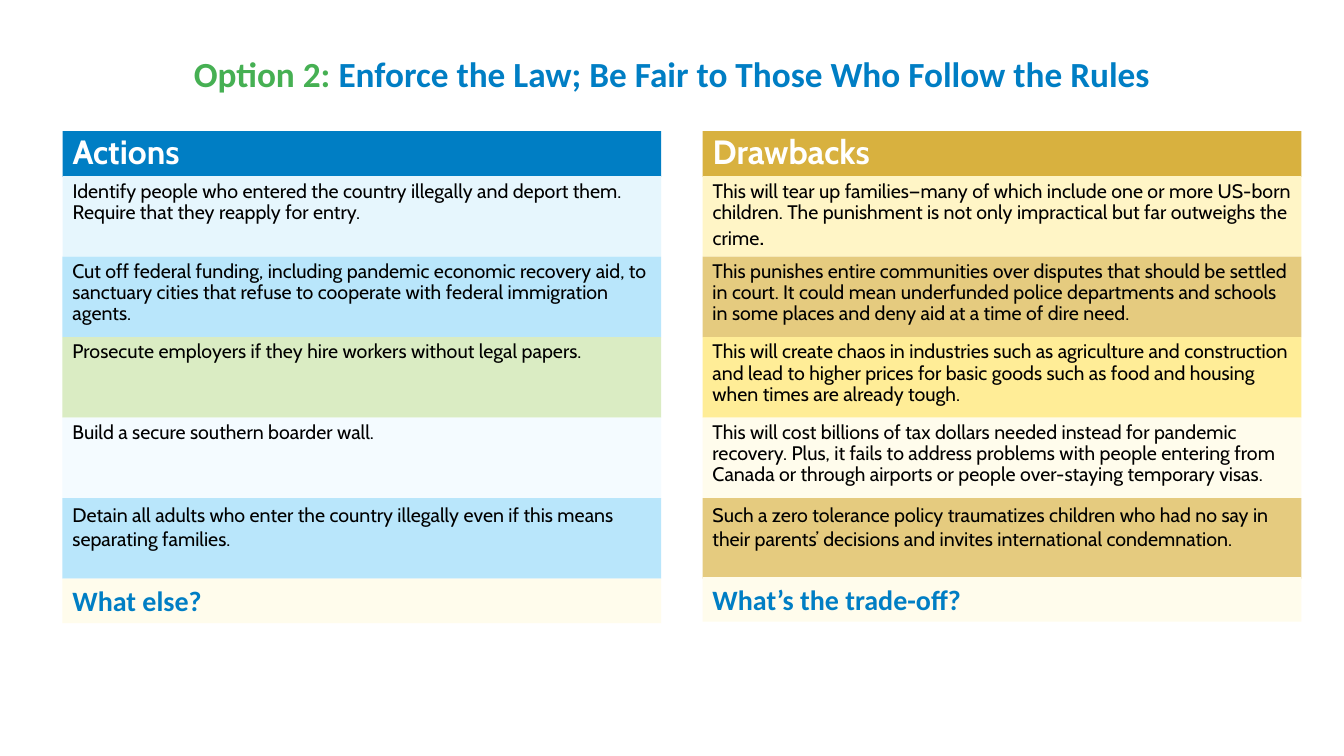
from dataclasses import dataclass

from lxml import etree
from pptx import Presentation
from pptx import util as u
from pptx.dml.color import RGBColor
from pptx.enum import shapes, text
from pptx.oxml.ns import qn

COLOURS = {
    "blue": "007EC4", "green": "46B053", "gold": "D8B13F",
    "white": "FFFFFF", "black": "000000", "cream": "FFFCEC",
    "ice": "E6F6FD", "sky": "B9E6FB", "mint": "DAECC3", "frost": "F4FBFF",
    "butter": "FFF5C6", "sand": "E5CB7F", "lemon": "FFED97",
}
COLUMN_WIDTH = 427.68
HEADER_TOP, HEADER_HEIGHT = 93.6, 32.8
ROWS_TOP, ROW_HEIGHT = 125.8, 57.5
FOOT_HEIGHT = 31.8


@dataclass
class Span:
    words: str
    size: float = 14
    colour: str = "black"
    font: str = "Cabin"
    bold: bool = False


@dataclass
class Row:
    fill: str
    spans: list[Span]
    spacing: float = 0.9


@dataclass
class Column:
    left: float
    header: Row
    rows: list[Row]
    foot: Row
    foot_top: float
    placeholders: tuple[int, int]


def heading(words: str, fill: str) -> Row:
    return Row(fill, [Span(words, 24, "white", bold=True)])


def question(words: str) -> Row:
    return Row("cream", [Span(words, 20, "blue", "Calibri", True)], 1.0)


COLUMNS = [
    Column(44.64, heading("Actions", "blue"), [
        Row("ice", [Span("Identify people who entered the country illegally and deport them. "
                         "Require that they reapply for entry.")]),
        Row("sky", [Span("Cut off federal funding, including pandemic economic recovery aid, to "
                         "sanctuary cities that refuse to cooperate with federal immigration "
                         "agents.")]),
        Row("mint", [Span("Prosecute employers if they hire workers without legal papers.")]),
        Row("frost", [Span("Build a secure southern boarder wall.")]),
        Row("sky", [Span("Detain all adults who enter the country illegally even if this means "
                         "separating families.")], 1.0),
    ], question("What else?"), 413.3, (1, 2)),
    Column(501.84, heading("Drawbacks", "gold"), [
        Row("butter", [Span("This will tear up families—many of which include one or more "
                            "US-born children. The punishment is not only impractical but far "
                            "outweighs the crime"), Span(".", 18)]),
        Row("sand", [Span("This punishes entire communities over disputes that should be settled "
                          "in court. It could mean underfunded police departments and schools "
                          "in some places and deny aid at a time of dire need.")]),
        Row("lemon", [Span("This will create chaos in industries such as agriculture and "
                           "construction and lead to higher prices for basic goods such as food "
                           "and housing when times are already tough.")]),
        Row("cream", [Span("This will cost billions of tax dollars needed instead for pandemic "
                           "recovery. Plus, it fails to address problems with people entering "
                           "from Canada or through airports or people over-staying temporary "
                           "visas.")]),
        Row("sand", [Span("Such a zero tolerance policy traumatizes children who had no say in "
                          "their parents’ decisions and invites international condemnation.")],
            1.0),
    ], question("What’s the trade-off?"), 412.3, (3, 4)),
]


def colour(name: str) -> RGBColor:
    return RGBColor.from_string(COLOURS[name])


def place(box, left: float, top: float, width: float, height: float) -> None:
    box.left, box.top = u.Pt(left), u.Pt(top)
    box.width, box.height = u.Pt(width), u.Pt(height)


def write(box, spans: list[Span], spacing: float, anchor, align, before: float = 0) -> None:
    frame = box.text_frame
    frame.word_wrap = True
    frame.auto_size = text.MSO_AUTO_SIZE.NONE
    frame.vertical_anchor = anchor
    para = frame.paragraphs[0]
    para.alignment = align
    para.line_spacing = spacing
    para.space_before = u.Pt(before)
    for span in spans:
        run = para.add_run()
        run.text = span.words
        run.font.name = span.font
        run.font.size = u.Pt(span.size)
        run.font.bold = span.bold
        run.font.color.rgb = colour(span.colour)


def remove_bullet(box) -> None:
    properties = box.text_frame.paragraphs[0]._p.get_or_add_pPr()
    properties.set("marL", "0")
    properties.set("indent", "0")
    etree.SubElement(properties, qn("a:buNone"))


def draw_row(page, row: Row, left: float, top: float, height: float,
             placeholder: int | None = None, anchor=text.MSO_ANCHOR.TOP) -> None:
    """Fill a band of a column, using a body placeholder where one is given."""
    if placeholder is None:
        box = page.shapes.add_shape(shapes.MSO_SHAPE.RECTANGLE, 0, 0, 0, 0)
        box.shadow.inherit = False
    else:
        box = next(p for p in page.placeholders if p.placeholder_format.idx == placeholder)
    place(box, left, top, COLUMN_WIDTH, height)
    box.fill.solid()
    box.fill.fore_color.rgb = colour(row.fill)
    box.line.fill.background()
    before = 10 if row.spacing < 1 else 0
    write(box, row.spans, row.spacing, anchor, text.PP_ALIGN.LEFT, before)
    if placeholder is not None:
        remove_bullet(box)


def draw_column(page, column: Column) -> None:
    header_id, first_row_id = column.placeholders
    draw_row(page, column.header, column.left, HEADER_TOP, HEADER_HEIGHT,
             header_id, text.MSO_ANCHOR.BOTTOM)
    for index, row in enumerate(column.rows):
        draw_row(page, row, column.left, ROWS_TOP + index * ROW_HEIGHT, ROW_HEIGHT,
                 first_row_id if index == 0 else None)
    draw_row(page, column.foot, column.left, column.foot_top, FOOT_HEIGHT)


def main() -> None:
    deck = Presentation()
    deck.slide_width, deck.slide_height = u.Pt(960), u.Pt(540)
    page = deck.slides.add_slide(deck.slide_layouts.get_by_name("Comparison"))
    title = page.shapes.title
    place(title, 66, 28.8, 828, 50.4)
    write(title, [
        Span("Option 2: ", 25.2, "green", "Calibri", True),
        Span("Enforce the Law; Be Fair to Those Who Follow the Rules",
             25.2, "blue", "Calibri", True),
    ], 0.9, text.MSO_ANCHOR.MIDDLE, text.PP_ALIGN.CENTER)
    for column in COLUMNS:
        draw_column(page, column)
    deck.save("out.pptx")


if __name__ == "__main__":
    main()
